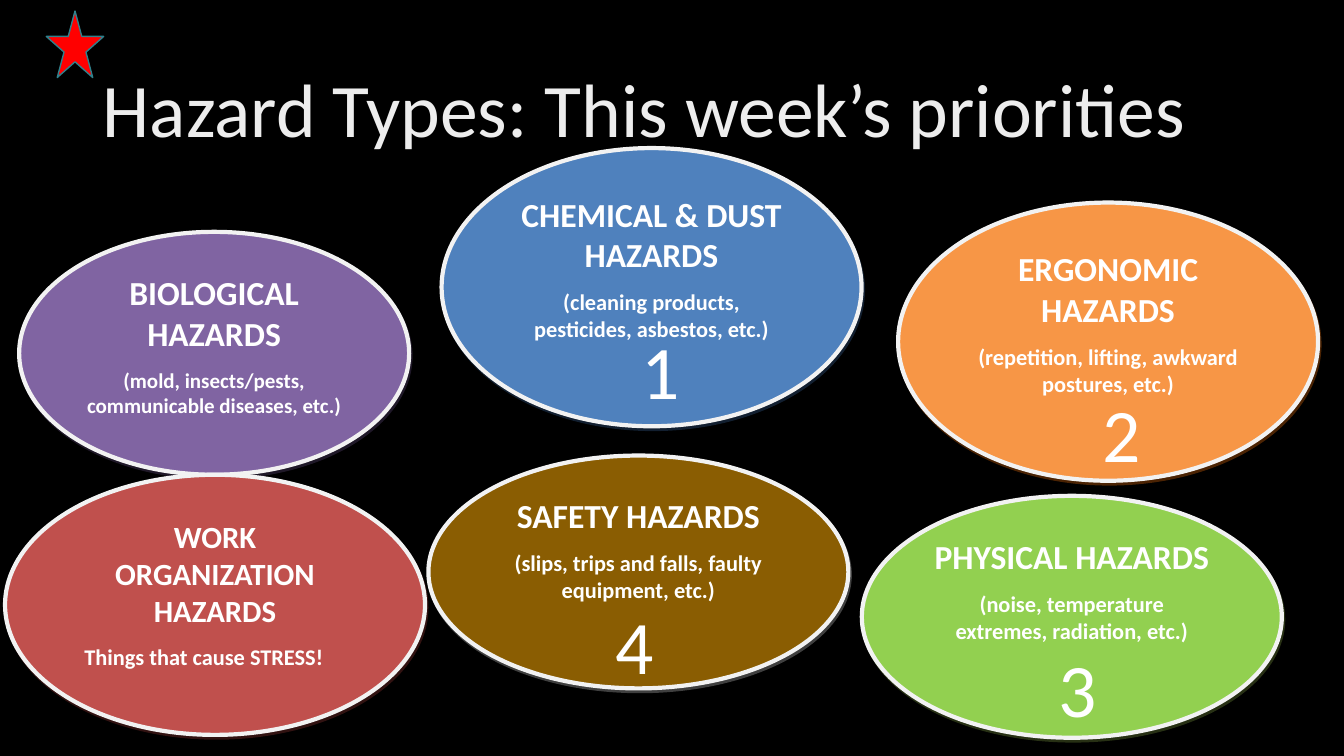
from dataclasses import dataclass

from lxml import etree
from pptx import Presentation
from pptx import util as u
from pptx.dml.color import RGBColor
from pptx.enum import shapes, text
from pptx.oxml import ns


@dataclass(frozen=True)
class Theme:
    font: str = "Calibri"
    background: str = "000000"
    ink: str = "FFFFFF"
    outline: str = "F2F2F2"
    star: str = "FF0000"
    star_line: str = "30818C"
    title_stops: tuple = ((0, "BFBFBF"), (28, "EDEDED"), (100, "FFFFFF"))
    display_size: float = 54
    heading_size: float = 24
    small_heading_size: float = 22
    detail_size: float = 16
    small_detail_size: float = 15


THEME = Theme()

HAZARDS = [
    ("CHEMICAL & DUST HAZARDS", "(cleaning products, pesticides, asbestos, etc.)",
     (315.4, 105.8, 300, 198.7), "4F81BD", "243F60", {}),
    ("BIOLOGICAL HAZARDS", "(mold, insects/pests, communicable diseases, etc.)",
     (13.7, 165.6, 278.6, 173.5), "8064A2", "3F3151", {"detail_size": THEME.small_detail_size}),
    ("ERGONOMIC HAZARDS", "(repetition, lifting, awkward postures, etc.)",
     (641.5, 144.7, 300, 198.7), "F79646", "974706", {}),
    ("WORK ORGANIZATION HAZARDS", "Things that cause STRESS!",
     (3.6, 339.1, 300, 185.8), "C0504D", "622423",
     {"heading_size": THEME.small_heading_size, "detail_indent": 16}),
    ("SAFETY HAZARDS", "(slips, trips and falls, faulty equipment, etc.)",
     (306, 325.4, 300, 166.3), "8A5D02", "7F7F7F", {}),
    ("PHYSICAL HAZARDS", "(noise, temperature extremes, radiation, etc.)",
     (615.6, 354.2, 300, 172.8), "92D050", "4E6128", {}),
]

PRIORITIES = [
    (451.4, 227.5, 31.7, text.PP_ALIGN.CENTER),
    (780.5, 272.9, 44.6, text.PP_ALIGN.LEFT),
    (748.8, 455, 33.8, text.PP_ALIGN.LEFT),
    (432.7, 424.1, 46.8, text.PP_ALIGN.LEFT),
]


def apply_format(target, values):
    for name, value in values.items():
        setattr(target, name, value)


def points(*lengths):
    return [u.Pt(length) for length in lengths]


def write(paragraph, words, size, bold=False, **layout):
    paragraph.text = words
    apply_format(paragraph, layout)
    font = paragraph.runs[0].font
    apply_format(font, {"name": THEME.font, "size": u.Pt(size), "bold": bold})
    font.color.rgb = RGBColor.from_string(THEME.ink)
    return font


def add_figure(slide, kind, box, fill, line, weight):
    shape = slide.shapes.add_shape(kind, *points(*box))
    shape.shadow.inherit = False
    shape.fill.solid()
    shape.fill.fore_color.rgb = RGBColor.from_string(fill)
    shape.line.color.rgb = RGBColor.from_string(line)
    shape.line.width = u.Pt(weight)
    return shape


def add_shadow(shape, color):
    effects = shape.element.spPr.find(ns.qn("a:effectLst"))
    shadow = etree.SubElement(effects, ns.qn("a:outerShdw"), blurRad="0",
                              dist=str(u.Pt(2.2)), dir=str(63 * 60000),
                              algn="ctr", rotWithShape="0")
    tint = etree.SubElement(shadow, ns.qn("a:srgbClr"), val=color)
    etree.SubElement(tint, ns.qn("a:alpha"), val="50000")


def add_hazard(slide, heading, detail, box, fill, shadow, options):
    ellipse = add_figure(slide, shapes.MSO_SHAPE.OVAL, box, fill, THEME.outline, 3)
    add_shadow(ellipse, shadow)
    frame = ellipse.text_frame
    apply_format(frame, {"word_wrap": True, "vertical_anchor": text.MSO_ANCHOR.TOP})
    layout = {"alignment": text.PP_ALIGN.CENTER, "space_after": u.Pt(10)}
    write(frame.paragraphs[0], heading,
          options.get("heading_size", THEME.heading_size), True, **layout)
    paragraph = frame.add_paragraph()
    write(paragraph, detail,
          options.get("detail_size", THEME.detail_size), True, **layout)
    if "detail_indent" in options:
        properties = paragraph._p.get_or_add_pPr()
        properties.set("marR", str(u.Pt(options["detail_indent"])))


def add_priority(slide, number, left, top, width, alignment):
    frame = slide.shapes.add_textbox(*points(left, top, width, 72.7)).text_frame
    apply_format(frame, {"word_wrap": True,
                         "auto_size": text.MSO_AUTO_SIZE.SHAPE_TO_FIT_TEXT})
    write(frame.paragraphs[0], str(number), THEME.display_size, alignment=alignment)


def apply_gradient(font, stops, angle):
    font.fill.gradient()
    font.fill.gradient_angle = 0
    gradient = font._element.find(ns.qn("a:gradFill"))
    stop_list = gradient.find(ns.qn("a:gsLst"))
    for stop in list(stop_list):
        stop_list.remove(stop)
    for position, color in stops:
        stop = etree.SubElement(stop_list, ns.qn("a:gs"), pos=str(position * 1000))
        etree.SubElement(stop, ns.qn("a:srgbClr"), val=color)
    gradient.find(ns.qn("a:lin")).set("ang", str(angle * 60000))


def place_title(slide, words):
    title = slide.shapes.title
    title.element.getparent().append(title.element)
    left, top, width, height = points(66.2, 28.8, 828, 104.4)
    apply_format(title, {"left": left, "top": top, "width": width, "height": height})
    frame = title.text_frame
    apply_format(frame, {"word_wrap": True, "auto_size": text.MSO_AUTO_SIZE.NONE,
                         "vertical_anchor": text.MSO_ANCHOR.MIDDLE})
    font = write(frame.paragraphs[0], words, THEME.display_size,
                 alignment=text.PP_ALIGN.LEFT, line_spacing=0.9)
    apply_gradient(font, THEME.title_stops, 80)


def main():
    presentation = Presentation()
    apply_format(presentation, {"slide_width": u.Pt(960), "slide_height": u.Pt(540)})
    slide = presentation.slides.add_slide(presentation.slide_layouts[5])
    slide.background.fill.solid()
    slide.background.fill.fore_color.rgb = RGBColor.from_string(THEME.background)
    for hazard in HAZARDS:
        add_hazard(slide, *hazard)
    for number, priority in enumerate(PRIORITIES, 1):
        add_priority(slide, number, *priority)
    place_title(slide, "Hazard Types: This week’s priorities")
    add_figure(slide, shapes.MSO_SHAPE.STAR_5_POINT, (33.1, 7.9, 41, 47.5),
               THEME.star, THEME.star_line, 1)
    presentation.save("out.pptx")


if __name__ == "__main__":
    main()
